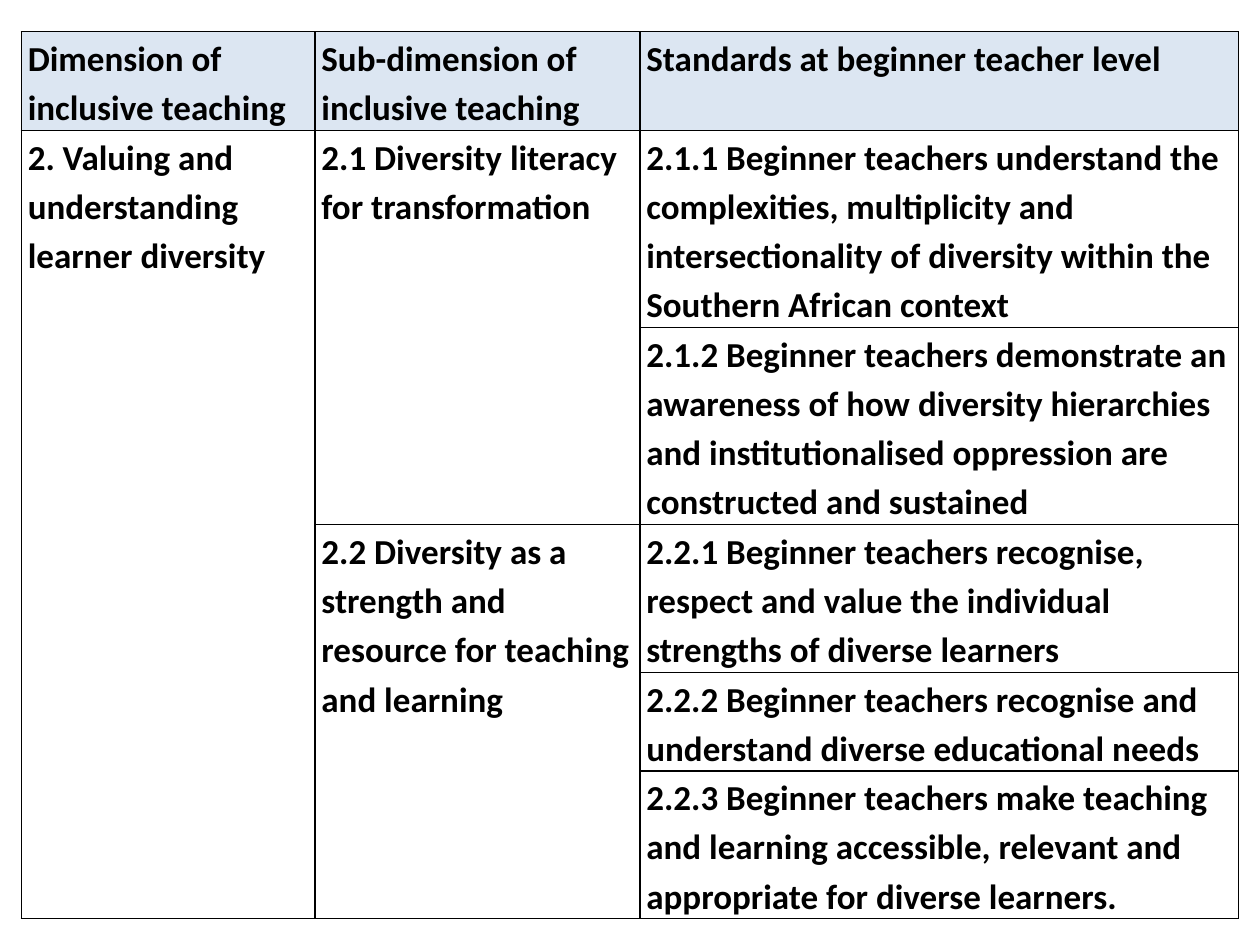
from lxml import etree
from pptx import Presentation
from pptx.dml.color import RGBColor
from pptx.enum.text import MSO_ANCHOR
from pptx.oxml.ns import qn
from pptx.util import Cm, Pt

TOP = MSO_ANCHOR.TOP
HEADER_FILL, BLACK = "DCE6F2", "000000"
LINE_HEIGHT = 0.99  # cm per line of text

COLUMN_WIDTHS = [5.92, 6.55, 12.07]
HEADERS = [
    "Dimension of inclusive teaching",
    "Sub-dimension of inclusive teaching",
    "Standards at beginner teacher level",
]
DIMENSION = "2. Valuing and understanding learner diversity"
# Each sub-dimension with its standards and the lines each standard takes
SUB_DIMENSIONS = [
    ("2.1 Diversity literacy for transformation", [
        ("2.1.1 Beginner teachers understand the complexities, multiplicity and "
         "intersectionality of diversity within the Southern African context", 4),
        ("2.1.2 Beginner teachers demonstrate an awareness of how diversity "
         "hierarchies and institutionalised oppression are constructed and "
         "sustained", 4),
    ]),
    ("2.2 Diversity as a strength and resource for teaching and learning", [
        ("2.2.1 Beginner teachers recognise, respect and value the individual "
         "strengths of diverse learners", 3),
        ("2.2.2 Beginner teachers recognise and understand diverse educational "
         "needs", 2),
        ("2.2.3 Beginner teachers make teaching and learning accessible, relevant "
         "and appropriate for diverse learners.", 3),
    ]),
]


def color(value):
    return RGBColor.from_string(value)


class SlideBuilder:
    font = {"name": "Calibri", "size": Pt(20), "bold": True}
    cell_format = {
        "margin_left": Cm(0.13), "margin_right": Cm(0.13),
        "margin_top": 0, "margin_bottom": 0, "vertical_anchor": TOP,
    }

    def __init__(self, prs):
        self.slide = prs.slides.add_slide(prs.slide_layouts[6])

    def table(self, left, top, widths, heights):
        """Add a table without banding, every cell formatted and bordered."""
        frame = self.slide.shapes.add_table(
            len(heights), len(widths), Cm(left), Cm(top),
            Cm(sum(widths)), Cm(sum(heights)))
        table = frame.table
        table.first_row = table.horz_banding = False
        for column, width in zip(table.columns, widths):
            column.width = Cm(width)
        for row, height in zip(table.rows, heights):
            row.height = Cm(height)
        for cell in table.iter_cells():
            for name, value in self.cell_format.items():
                setattr(cell, name, value)
            self.borders(cell)
            cell.fill.background()
        return table

    def borders(self, cell):
        props = cell._tc.get_or_add_tcPr()
        for side in ("a:lnL", "a:lnR", "a:lnT", "a:lnB"):
            line = etree.SubElement(props, qn(side), w=str(Pt(1)))
            fill = etree.SubElement(line, qn("a:solidFill"))
            etree.SubElement(fill, qn("a:srgbClr"), val=BLACK)

    def text(self, cell, text, fill=None):
        p = cell.text_frame.paragraphs[0]
        p.line_spacing = 1.15
        r = p.add_run()
        r.text = text
        for name, value in self.font.items():
            setattr(r.font, name, value)
        r.font.color.rgb = color(BLACK)
        if fill:
            cell.fill.solid()
            cell.fill.fore_color.rgb = color(fill)


def main():
    prs = Presentation()
    prs.slide_width, prs.slide_height = Cm(25.4), Cm(19.05)
    s = SlideBuilder(prs)

    lines = [2] + [n for _, standards in SUB_DIMENSIONS for _, n in standards]
    heights = [n * LINE_HEIGHT for n in lines]
    table = s.table(0.43, 0.64, COLUMN_WIDTHS, heights)

    for column, header in enumerate(HEADERS):
        s.text(table.cell(0, column), header, HEADER_FILL)

    table.cell(1, 0).merge(table.cell(len(lines) - 1, 0))
    s.text(table.cell(1, 0), DIMENSION)

    row = 1
    for sub_dimension, standards in SUB_DIMENSIONS:
        first = table.cell(row, 1)
        first.merge(table.cell(row + len(standards) - 1, 1))
        s.text(first, sub_dimension)
        for standard, _ in standards:
            s.text(table.cell(row, 2), standard)
            row += 1

    prs.save("out.pptx")


if __name__ == "__main__":
    main()
